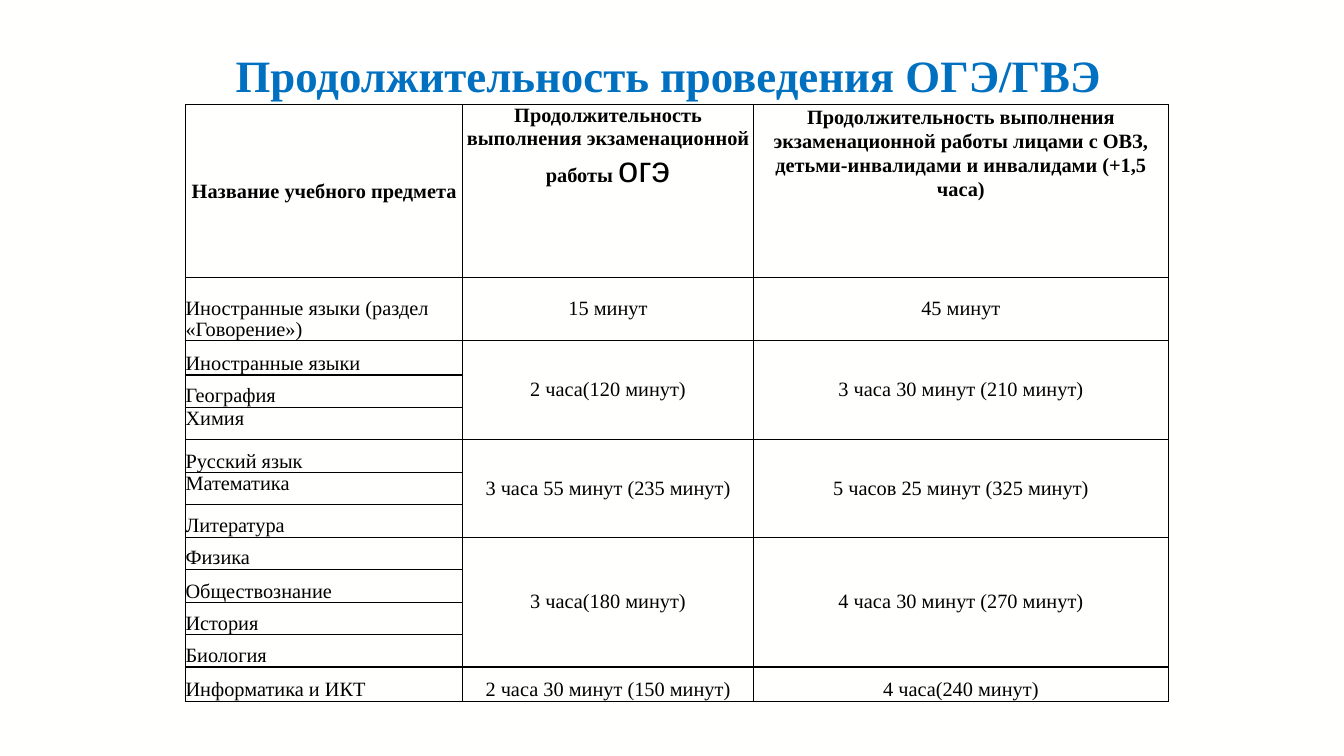
from dataclasses import dataclass

from lxml.etree import SubElement
from pptx import Presentation
from pptx.dml.color import RGBColor
from pptx.enum.shapes import MSO_SHAPE
from pptx.enum.text import MSO_ANCHOR, PP_ALIGN
from pptx.oxml.ns import qn
from pptx.util import Inches, Pt

COLORS = {"back": "FFFFFE", "title_box": "FFFFFF", "title": "0070C0", "text": "000000"}
SERIF = "Times New Roman"
TOP, MIDDLE, BOTTOM = MSO_ANCHOR.TOP, MSO_ANCHOR.MIDDLE, MSO_ANCHOR.BOTTOM
COL_WIDTHS = [2.75, 2.88, 4.12]
ROW_HEIGHTS = [1.71, 0.63, 0.34, 0.32, 0.32, 0.33, 0.32, 0.32, 0.32, 0.33, 0.32, 0.32, 0.34]


@dataclass
class Run:
    text: str
    bold: bool = False
    size: float = 14.5
    font: str = SERIF
    color: str = "text"


@dataclass
class Header:
    runs: list[Run]
    anchor: MSO_ANCHOR
    spacing: float


@dataclass
class Subject:
    name: str
    anchor: MSO_ANCHOR = BOTTOM
    spacing: float = 1.0


@dataclass
class Group:
    subjects: list[Subject]
    oge: str
    extended: str
    anchor: MSO_ANCHOR = MIDDLE


HEADERS = [
    Header([Run("Название учебного предмета", True)], MIDDLE, 1.05),
    Header([Run("Продолжительность выполнения экзаменационной работы ", True),
            Run("огэ", size=26, font="Arial")], TOP, 1.0),
    Header([Run("Продолжительность выполнения экзаменационной работы лицами с ОВЗ, "
                "детьми-инвалидами и инвалидами (+1,5 часа)", True)], TOP, 1.07),
]
GROUPS = [
    Group([Subject("Иностранные языки (раздел «Говорение»)", spacing=0.92)],
          "15 минут", "45 минут"),
    Group([Subject("Иностранные языки"), Subject("География"), Subject("Химия", TOP)],
          "2 часа(120 минут)", "3 часа 30 минут (210 минут)"),
    Group([Subject("Русский язык"), Subject("Математика", TOP), Subject("Литература")],
          "3 часа 55 минут (235 минут)", "5 часов 25 минут (325 минут)"),
    Group([Subject("Физика"), Subject("Обществознание"), Subject("История"),
           Subject("Биология")],
          "3 часа(180 минут)", "4 часа 30 минут (270 минут)"),
    Group([Subject("Информатика и ИКТ")],
          "2 часа 30 минут (150 минут)", "4 часа(240 минут)", BOTTOM),
]


def rgb(name: str) -> RGBColor:
    return RGBColor.from_string(COLORS[name])


def add_runs(p, runs: list[Run], align: PP_ALIGN, spacing: float = 1.0) -> None:
    p.alignment = align
    p.line_spacing = spacing
    for run in runs:
        r = p.add_run()
        r.text = run.text
        r.font.name = run.font
        r.font.size = Pt(run.size)
        r.font.bold = run.bold
        r.font.color.rgb = rgb(run.color)


def style_cell(cell) -> None:
    cell.margin_left = cell.margin_right = cell.margin_top = cell.margin_bottom = 0
    tc_pr = cell._tc.get_or_add_tcPr()
    for side in ("a:lnL", "a:lnR", "a:lnT", "a:lnB"):
        ln = SubElement(tc_pr, qn(side), w=str(Pt(1)))
        fill = SubElement(ln, qn("a:solidFill"))
        SubElement(fill, qn("a:srgbClr"), val=COLORS["text"])
    cell.fill.background()


def fill_cell(cell, runs: list[Run], anchor: MSO_ANCHOR,
              align: PP_ALIGN = PP_ALIGN.CENTER, spacing: float = 1.0) -> None:
    cell.vertical_anchor = anchor
    add_runs(cell.text_frame.paragraphs[0], runs, align, spacing)


def add_title(s) -> None:
    sp = s.shapes.add_shape(MSO_SHAPE.RECTANGLE, Inches(2.33), Inches(0.47),
                            Inches(8.6), Inches(0.44))
    sp.shadow.inherit = False
    sp.fill.solid()
    sp.fill.fore_color.rgb = rgb("title_box")
    sp.line.fill.background()
    tf = sp.text_frame
    tf.margin_left = tf.margin_right = tf.margin_top = tf.margin_bottom = 0
    tf.word_wrap = False
    tf.vertical_anchor = TOP
    title = Run("Продолжительность проведения ОГЭ/ГВЭ", True, 32, color="title")
    add_runs(tf.paragraphs[0], [title], PP_ALIGN.CENTER)


def add_schedule(s) -> None:
    table = s.shapes.add_table(len(ROW_HEIGHTS), len(COL_WIDTHS), Inches(1.84), Inches(1.04),
                               Inches(sum(COL_WIDTHS)), Inches(sum(ROW_HEIGHTS))).table
    table.first_row = table.horz_banding = False
    for col, width in zip(table.columns, COL_WIDTHS):
        col.width = Inches(width)
    for row, height in zip(table.rows, ROW_HEIGHTS):
        row.height = Inches(height)
    for cell in table.iter_cells():
        style_cell(cell)

    # Header row
    for col, header in enumerate(HEADERS):
        fill_cell(table.cell(0, col), header.runs, header.anchor, spacing=header.spacing)

    # Subjects sharing one duration
    top = 1
    for group in GROUPS:
        for row, subject in enumerate(group.subjects, top):
            fill_cell(table.cell(row, 0), [Run(subject.name)], subject.anchor,
                      PP_ALIGN.LEFT, subject.spacing)
        last = top + len(group.subjects) - 1
        for col, duration in enumerate((group.oge, group.extended), 1):
            cell = table.cell(top, col)
            if last > top:
                cell.merge(table.cell(last, col))
            fill_cell(cell, [Run(duration)], group.anchor)
        top = last + 1


def main() -> None:
    prs = Presentation()
    prs.slide_width, prs.slide_height = Inches(13.33), Inches(7.5)
    s = prs.slides.add_slide(prs.slide_layouts[6])
    s.background.fill.solid()
    s.background.fill.fore_color.rgb = rgb("back")
    add_title(s)
    add_schedule(s)
    prs.save("out.pptx")


if __name__ == "__main__":
    main()
